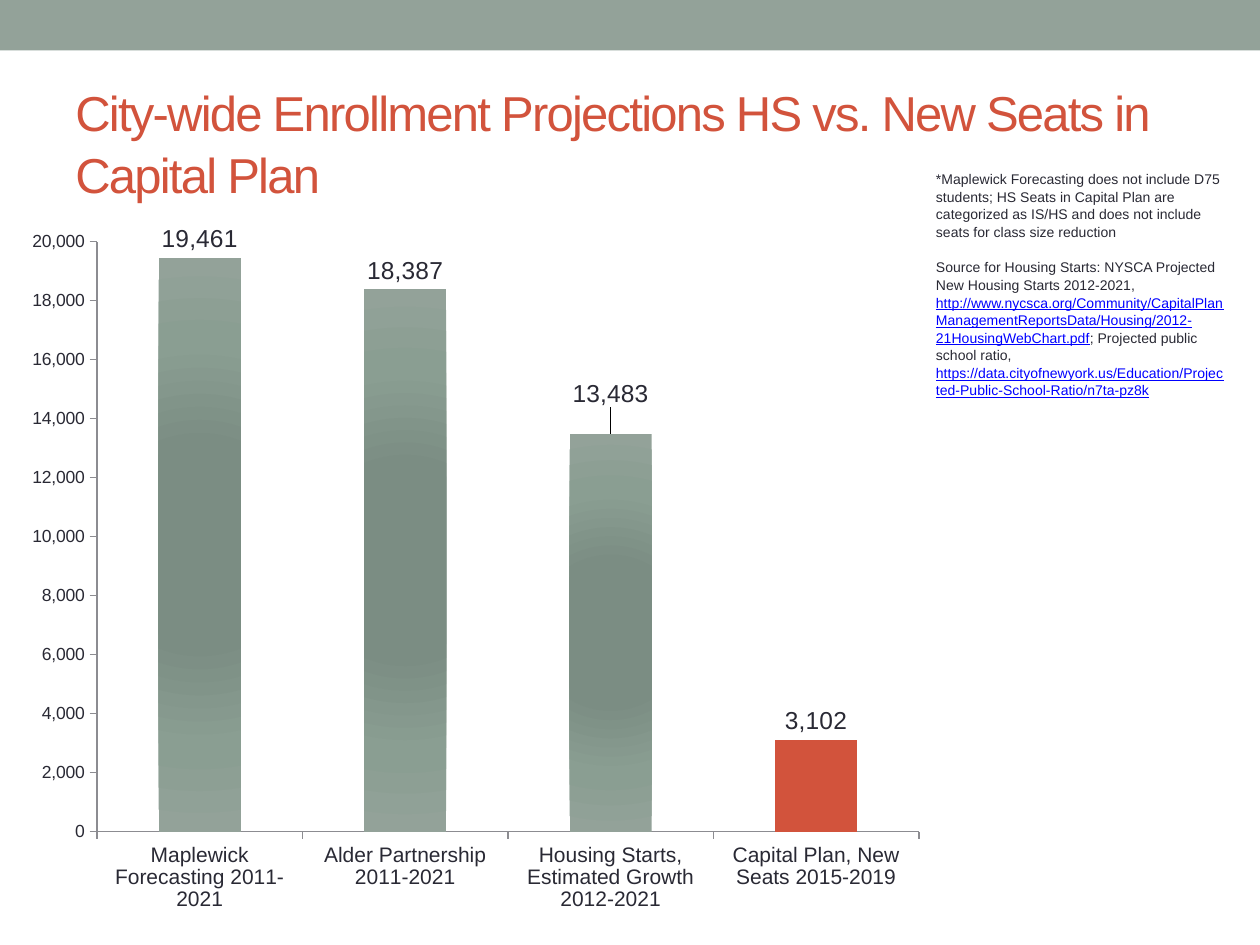
from lxml import etree
from pptx import Presentation
from pptx.chart.data import CategoryChartData
from pptx.dml.color import RGBColor
from pptx.enum.chart import XL_CHART_TYPE, XL_LABEL_POSITION, XL_TICK_MARK
from pptx.enum.shapes import MSO_SHAPE
from pptx.enum.text import MSO_ANCHOR
from pptx.oxml import parse_xml
from pptx.oxml.ns import nsdecls, qn
from pptx.util import Inches, Pt

COLUMN = XL_CHART_TYPE.COLUMN_CLUSTERED
OUTSIDE_END = XL_LABEL_POSITION.OUTSIDE_END
TICK_OUT, TICK_NONE = XL_TICK_MARK.OUTSIDE, XL_TICK_MARK.NONE
RECTANGLE = MSO_SHAPE.RECTANGLE
TOP, MIDDLE = MSO_ANCHOR.TOP, MSO_ANCHOR.MIDDLE

FONT = "Arial"
NUMBER_FORMAT = "#,##0"
COLORS = {"sage": "93A299", "red": "D2533C", "ink": "292934",
          "link": "0000FF", "axis": "8C8C91"}
SAGE_STOPS = [(0, "7B8E82"), (34, "7B8D83"), (70, "8A9E92"), (100, "93A299")]

TITLE = "City-wide Enrollment Projections HS vs. New Seats in Capital Plan"
PROJECTIONS = [
    ("Maplewick Forecasting 2011-2021", 19461),
    ("Alder Partnership 2011-2021", 18387),
    ("Housing Starts, Estimated Growth 2012-2021", 13483),
    ("Capital Plan, New Seats 2015-2019", 3102),
]
HOUSING, CAPITAL_PLAN = 2, 3
# Each note: top, height, and runs of (text, colour name)
NOTES = [
    (1.3, 0.64, [
        ("*Maplewick Forecasting does not include D75 students; HS Seats in "
         "Capital Plan are categorized as IS/HS and does not include seats for "
         "class size reduction", "ink")]),
    (2, 1.31, [
        ("Source for Housing Starts: NYSCA Projected New Housing Starts "
         "2012-2021, ", "ink"),
        ("http://www.nycsca.org/Community/CapitalPlanManagementReportsData/"
         "Housing/2012-21HousingWebChart.pdf", "link"),
        ("; Projected public school ratio, ", "ink"),
        ("https://data.cityofnewyork.us/Education/"
         "Projected-Public-School-Ratio/n7ta-pz8k", "link")]),
]


def rgb(name):
    return RGBColor.from_string(COLORS[name])


def style_font(font, size, color):
    font.name, font.size = FONT, Pt(size)
    font.color.rgb = rgb(color)


def add_text(slide, place, runs, size, anchor=TOP):
    box = slide.shapes.add_textbox(*map(Inches, place))
    frame = box.text_frame
    frame.word_wrap = True
    frame.vertical_anchor = anchor
    para = frame.paragraphs[0]
    para.line_spacing = 1.05
    for text, color in runs:
        span = para.add_run()
        span.text = text
        style_font(span.font, size, color)
        span.font.underline = color == "link"
    return para


def fill_radially(point):
    """Give a column a gradient that runs from its centre outwards."""
    stops = "".join(f'<a:gs pos="{position * 1000}"><a:srgbClr val="{color}"/></a:gs>'
                    for position, color in SAGE_STOPS)
    point.format.fill.background()
    properties = point.format.fill._xPr
    gradient = parse_xml(
        f'<a:gradFill {nsdecls("a")} rotWithShape="1"><a:gsLst>{stops}</a:gsLst>'
        '<a:path path="circle"><a:fillToRect l="50000" t="50000" r="50000" b="50000"/>'
        '</a:path></a:gradFill>')
    properties.replace(properties.find(qn("a:noFill")), gradient)


def manual_layout(**settings):
    layout = etree.Element(qn("c:layout"))
    manual = etree.SubElement(layout, qn("c:manualLayout"))
    for tag, value in settings.items():
        etree.SubElement(manual, qn(f"c:{tag}")).set("val", str(value))
    return layout


def style_axis(axis, size):
    axis.has_major_gridlines = False
    axis.major_tick_mark, axis.minor_tick_mark = TICK_OUT, TICK_NONE
    axis.format.line.color.rgb = rgb("axis")
    style_font(axis.tick_labels.font, size, "ink")


def add_projection_chart(slide):
    data = CategoryChartData(number_format=NUMBER_FORMAT)
    data.categories = [name for name, _ in PROJECTIONS]
    data.add_series("Series 1", [seats for _, seats in PROJECTIONS])
    place = map(Inches, (0.11, 1.75, 7.33, 5.64))
    chart = slide.shapes.add_chart(COLUMN, *place, data).chart
    chart.has_legend = chart.has_title = False
    style_font(chart.font, 10, "ink")
    style_axis(chart.category_axis, 12)
    style_axis(chart.value_axis, 10)
    values = chart.value_axis
    values.minimum_scale, values.maximum_scale, values.major_unit = 0, 20000, 2000
    values.tick_labels.number_format = NUMBER_FORMAT
    values.tick_labels.number_format_is_linked = False

    plot = chart.plots[0]
    plot.gap_width = 150
    plot.vary_by_categories = False
    series = plot.series[0]
    series.format.fill.solid()
    series.format.fill.fore_color.rgb = rgb("sage")
    for index in range(CAPITAL_PLAN):
        fill_radially(series.points[index])
    plan_fill = series.points[CAPITAL_PLAN].format.fill
    plan_fill.solid()
    plan_fill.fore_color.rgb = rgb("red")

    labels = series.data_labels
    labels.show_value = True
    labels.number_format, labels.number_format_is_linked = NUMBER_FORMAT, False
    labels.position = OUTSIDE_END
    style_font(labels.font, 14, "ink")
    # The housing label sits a little higher than the others
    housing_label = series.points[HOUSING].data_label
    housing_label.position = OUTSIDE_END
    style_font(housing_label.font, 14, "ink")
    label_xml = labels._element.find(qn("c:dLbl"))
    label_xml.insert(1, manual_layout(x=0, y=-0.03))

    plot_area = chart._chartSpace.chart.plotArea
    for old_layout in plot_area.findall(qn("c:layout")):
        plot_area.remove(old_layout)
    plot_area.insert(0, manual_layout(layoutTarget="inner", xMode="edge", yMode="edge",
                                      x=0.09, y=0.03, w=0.89, h=0.83))


def main():
    deck = Presentation()
    deck.slide_width, deck.slide_height = Inches(10), Inches(7.5)
    slide = deck.slides.add_slide(deck.slide_layouts[6])

    band = slide.shapes.add_shape(RECTANGLE, 0, 0, deck.slide_width, Inches(0.4))
    band.shadow.inherit = False
    band.fill.solid()
    band.fill.fore_color.rgb = rgb("sage")
    band.line.fill.background()

    title = add_text(slide, (0.5, 0.58, 9, 1.08), [(TITLE, "red")], 28, MIDDLE)
    title.runs[0].font._element.set("spc", "-100")
    add_projection_chart(slide)
    for top, height, runs in NOTES:
        add_text(slide, (7.33, top, 2.51, height), runs, 8)
    deck.save("out.pptx")


if __name__ == "__main__":
    main()
